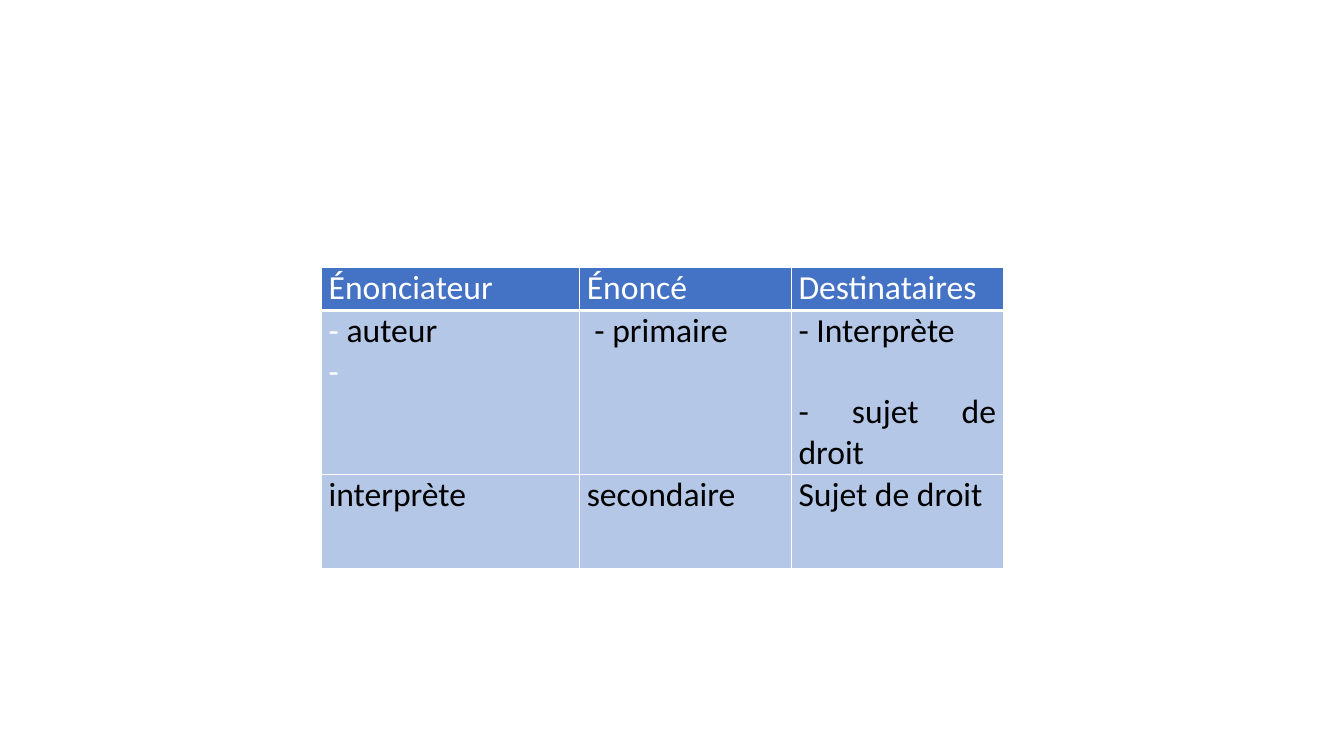
import lxml.etree
import pptx
import pptx.dml.color
import pptx.enum.text
import pptx.oxml.ns
import pptx.util

PX = 9144
WHITE, BLACK, HEADER, BODY = "FFFFFF", "000000", "4472C4", "B4C7E7"
COLUMNS = [256, 210, 210]
ROWS = [43, 163, 93]
CONTENT = [
    [
        [[("Énonciateur", WHITE)]],
        [[("Énoncé", WHITE)]],
        [[("Destinataires", WHITE)]],
    ],
    [
        [[("- ", WHITE), ("auteur", BLACK)], [("- ", WHITE)]],
        [[("\N{NO-BREAK SPACE}- primaire", BLACK)]],
        [[("- Interprète", BLACK)], [("- sujet de droit", BLACK)]],
    ],
    [
        [[("interprète", BLACK)]],
        [[("secondaire", BLACK)]],
        [[("Sujet de droit", BLACK)]],
    ],
]


def px(length):
    """Turn whole pixels into EMU."""
    return pptx.util.Emu(length * PX)


def color(value):
    """Turn a hex string into a colour."""
    return pptx.dml.color.RGBColor.from_string(value)


def add_borders(cell, bottom):
    """Draw white cell borders, the lower one of the given point width."""
    properties = cell._tc.get_or_add_tcPr()
    sides = [("lnL", 1), ("lnR", 1), ("lnT", 1), ("lnB", bottom)]
    for position, (side, width) in enumerate(sides):
        line = lxml.etree.Element(pptx.oxml.ns.qn(f"a:{side}"), w=str(pptx.util.Pt(width)))
        fill = lxml.etree.SubElement(line, pptx.oxml.ns.qn("a:solidFill"))
        lxml.etree.SubElement(fill, pptx.oxml.ns.qn("a:srgbClr"), val=WHITE)
        properties.insert(position, line)


def fill_cell(cell, paragraphs, background, bottom):
    """Write coloured spans into a cell and style it."""
    cell.margin_left = cell.margin_right = px(7)
    cell.margin_top = cell.margin_bottom = 0
    cell.fill.solid()
    cell.fill.fore_color.rgb = color(background)
    add_borders(cell, bottom)
    frame = cell.text_frame
    frame.text = "\n".join("".join(text for text, _ in spans) for spans in paragraphs)
    for para, spans in zip(frame.paragraphs, paragraphs):
        para.alignment = pptx.enum.text.PP_ALIGN.JUSTIFY
        para.runs[0].text = spans[0][0]
        for text, _ in spans[1:]:
            para.add_run().text = text
        for span, (_, shade) in zip(para.runs, spans):
            span.font.name = "Calibri"
            span.font.size = pptx.util.Pt(24)
            span.font.color.rgb = color(shade)


def add_roles_table(page, left, top):
    """Place the table of speakers, statements and recipients."""
    frame = page.shapes.add_table(
        len(ROWS), len(COLUMNS), px(left), px(top), px(sum(COLUMNS)), px(sum(ROWS))
    )
    table = frame.table
    table.horz_banding = False
    for column, width in zip(table.columns, COLUMNS):
        column.width = px(width)
    for index, (row, height) in enumerate(zip(table.rows, ROWS)):
        row.height = px(height)
        background, bottom = (BODY, 1) if index else (HEADER, 3)
        for cell, paragraphs in zip(row.cells, CONTENT[index]):
            fill_cell(cell, paragraphs, background, bottom)
    recipients = table.cell(1, 2).text_frame
    recipients.paragraphs[0].space_after = pptx.util.Pt(29)


def main():
    """Build and save the deck."""
    deck = pptx.Presentation()
    deck.slide_width, deck.slide_height = px(1333), px(750)
    page = deck.slides.add_slide(deck.slide_layouts[6])
    add_roles_table(page, 319, 265)
    deck.save("out.pptx")


if __name__ == "__main__":
    main()
